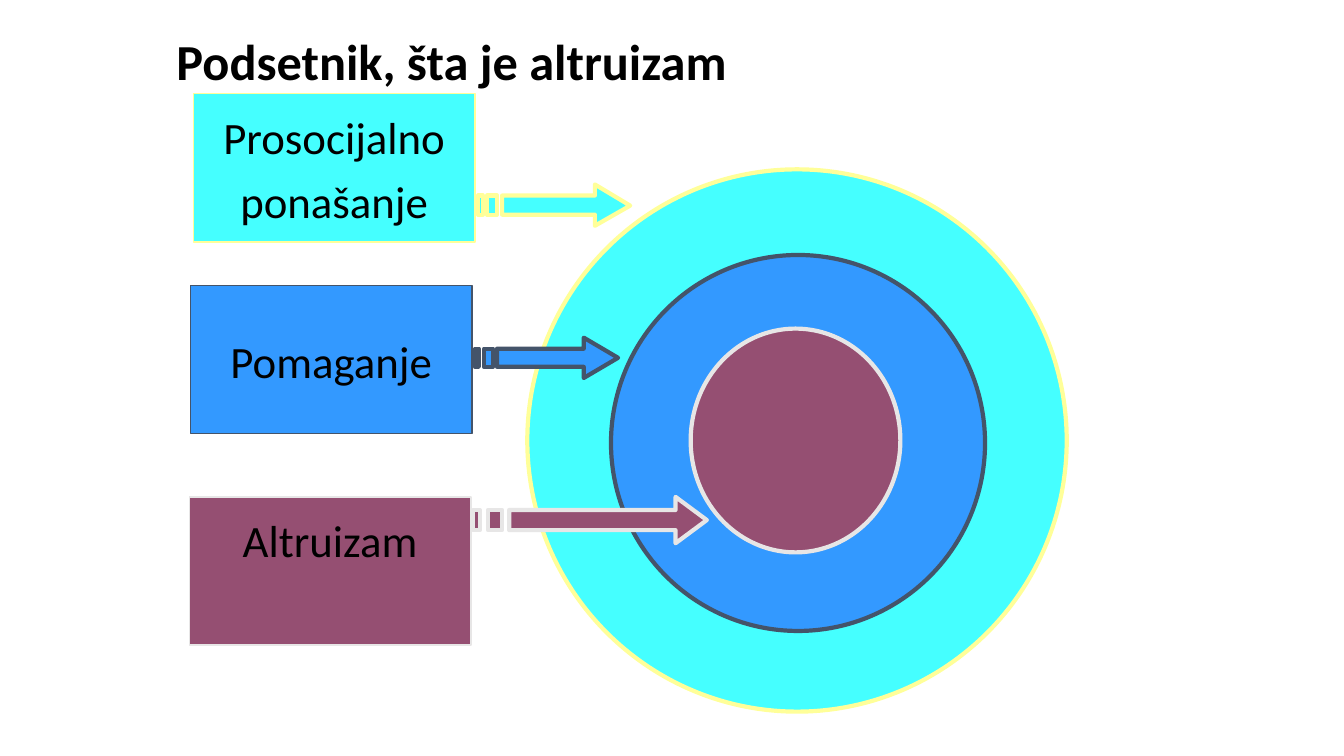
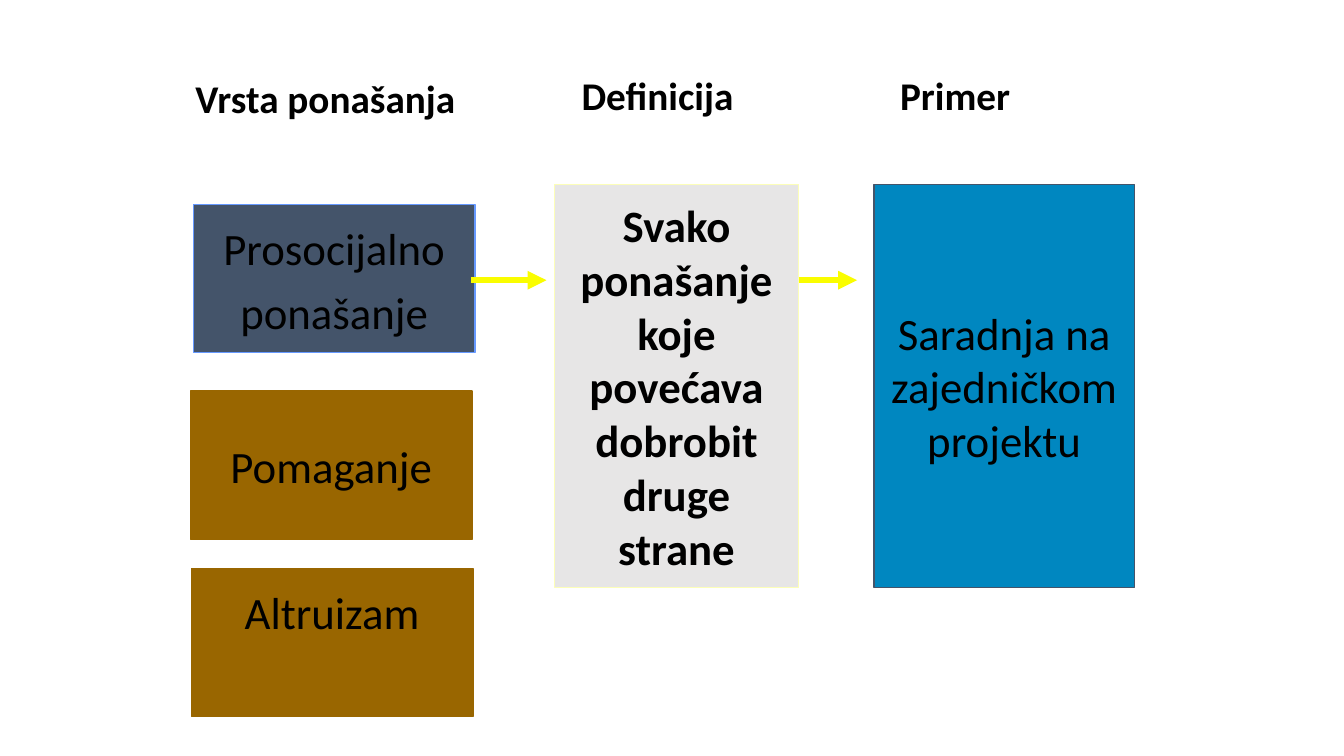
from pptx import Presentation
from pptx.dml.color import RGBColor
from pptx.enum.shapes import MSO_CONNECTOR, MSO_SHAPE
from pptx.enum.text import MSO_ANCHOR, PP_ALIGN
from pptx.oxml.ns import qn
from pptx.util import Pt
from lxml.etree import SubElement

PX = 9144
FONT = "Calibri"
C = {
    "black": "000000", "cyan": "45FFFF", "cream": "FFFF99", "blue": "3399FF",
    "slate": "44546A", "plum": "954F72", "gray": "E7E6E6", "sky": "6699FF",
    "brown": "996600", "pale": "FCFEB9", "yellow": "FAFD00", "teal": "0087C0",
}
BEHAVIOURS = [("Prosocijalno ponašanje", 1.2), ("Pomaganje", 1.8), ("Altruizam", 1.2)]
BOX_SIZE = (279, 147)

REMINDER = "Podsetnik, šta je altruizam"
LEVELS = [
    dict(fill="cyan", line="cream", box=(192, 93), circle=(523, 168, 535, 538),
         arrow=(474, 183, 151, 41), head=35),
    dict(fill="blue", line="slate", box=(189, 283), circle=(606, 253, 371, 373),
         arrow=(471, 335, 142, 40), head=34),
    dict(fill="plum", line="gray", box=(188, 493), circle=(685, 326, 208, 222),
         arrow=(469, 493, 232, 46), head=31),
]

HEADINGS = [
    ("Vrsta ponašanja", (184, 56, 294, 83)),
    ("Definicija", (567, 61, 217, 67)),
    ("Primer", (883, 61, 208, 67)),
]
KINDS = [((192, 203), "slate", "sky"), ((189, 388), "brown", "brown"), ((190, 564), "brown", "brown")]
DETAILS = [
    ("Svako ponašanje koje povećava dobrobit druge strane", (550, 183, 242, 400), "gray", "pale", True),
    ("Saradnja na zajedničkom projektu", (867, 183, 258, 400), "teal", "slate", False),
]
LINK_Y = 278
LINKS = [(467, 542), (792, 850)]


def emu(values):
    return [round(v * PX) for v in values]


def rgb(name):
    return RGBColor.from_string(C[name])


def paint(sp, fill, line, width):
    sp.shadow.inherit = False
    sp.fill.solid()
    sp.fill.fore_color.rgb = rgb(fill)
    sp.line.color.rgb = rgb(line)
    sp.line.width = Pt(width)


def write(sp, text, size, bold=False, align=PP_ALIGN.LEFT, spacing=1.0,
          anchor=MSO_ANCHOR.MIDDLE, margins=(10, 5)):
    tf = sp.text_frame
    tf.word_wrap = True
    tf.vertical_anchor = anchor
    tf.margin_left = tf.margin_right = margins[0] * PX
    tf.margin_top = tf.margin_bottom = margins[1] * PX
    p = tf.paragraphs[0]
    p.text = text
    p.alignment = align
    p.line_spacing = spacing
    p.font.name = FONT
    p.font.size = Pt(size)
    p.font.bold = bold
    p.font.color.rgb = rgb("black")


def add_label(s, at, text, size, **style):
    write(s.shapes.add_textbox(*emu(at)), text, size, bold=True, **style)


def add_box(s, at, text, fill, line, **style):
    sp = s.shapes.add_shape(MSO_SHAPE.RECTANGLE, *emu(at))
    paint(sp, fill, line, 1)
    write(sp, text, 32, align=PP_ALIGN.CENTER, **style)


def add_behaviour(s, index, corner, fill, line):
    text, spacing = BEHAVIOURS[index]
    add_box(s, corner + BOX_SIZE, text, fill, line, spacing=spacing, anchor=MSO_ANCHOR.TOP)


def add_striped_arrow(s, at, head, fill, line):
    x, y, w, h = at
    top, bottom = y + h * 0.28, y + h * 0.72
    neck, tip = x + w - head, x + w
    body = x + w * 5 / 32
    outlines = [[(neck, y), (neck, top), (body, top), (body, bottom),
                 (neck, bottom), (neck, y + h), (tip, y + h / 2)]]
    for start, end in ((2, 4), (0, 1)):
        left, right = x + w * start / 32, x + w * end / 32
        outlines.append([(left, top), (left, bottom), (right, bottom), (right, top)])
    builder = s.shapes.build_freeform(*outlines[0][0], scale=PX)
    for points in outlines:
        builder.move_to(*points[0])
        builder.add_line_segments(points[1:], close=True)
    paint(builder.convert_to_shape(), fill, line, 3)


def add_link(s, start, end):
    cx = s.shapes.add_connector(MSO_CONNECTOR.STRAIGHT, *emu((start, LINK_Y, end, LINK_Y)))
    cx.line.color.rgb = rgb("yellow")
    cx.line.width = Pt(4.5)
    SubElement(cx.line._get_or_add_ln(), qn("a:tailEnd"), type="triangle")
    SubElement(cx._element.spPr, qn("a:effectLst"))


def build_reminder(s):
    for level in LEVELS:
        circle = s.shapes.add_shape(MSO_SHAPE.OVAL, *emu(level["circle"]))
        paint(circle, level["fill"], level["line"], 3)
    for i, level in enumerate(LEVELS):
        colours = level["fill"], level["line"]
        add_behaviour(s, i, level["box"], *colours)
        add_striped_arrow(s, level["arrow"], level["head"], *colours)
    add_label(s, (175, 30, 1062, 61), REMINDER, 36, anchor=MSO_ANCHOR.TOP, margins=(0, 0))


def build_definition(s):
    for text, at in HEADINGS:
        add_label(s, at, text, 28)
    for i, kind in enumerate(KINDS):
        add_behaviour(s, i, *kind)
    for text, at, fill, line, bold in DETAILS:
        add_box(s, at, text, fill, line, bold=bold)
    for link in LINKS:
        add_link(s, *link)


def main():
    prs = Presentation()
    prs.slide_width, prs.slide_height = emu((1333, 750))
    for build in (build_reminder, build_definition):
        build(prs.slides.add_slide(prs.slide_layouts[6]))
    prs.save("out.pptx")


if __name__ == "__main__":
    main()
